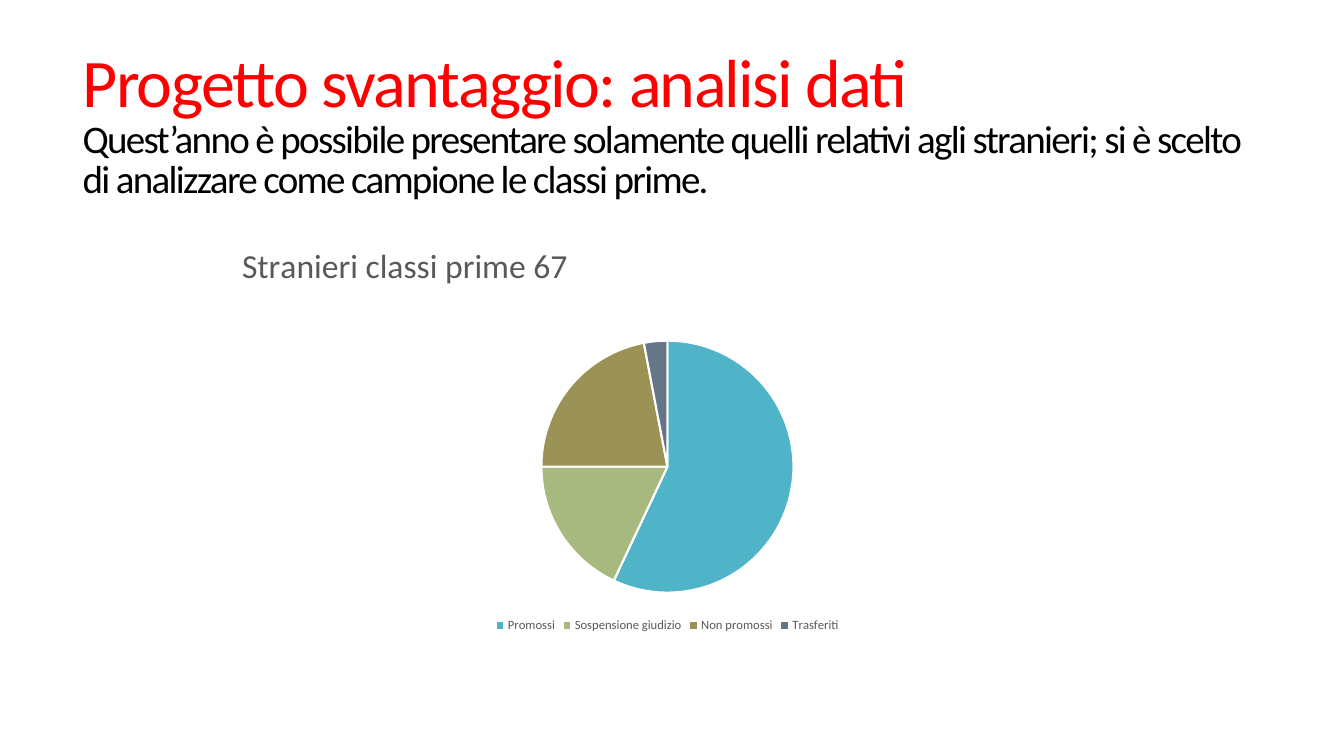
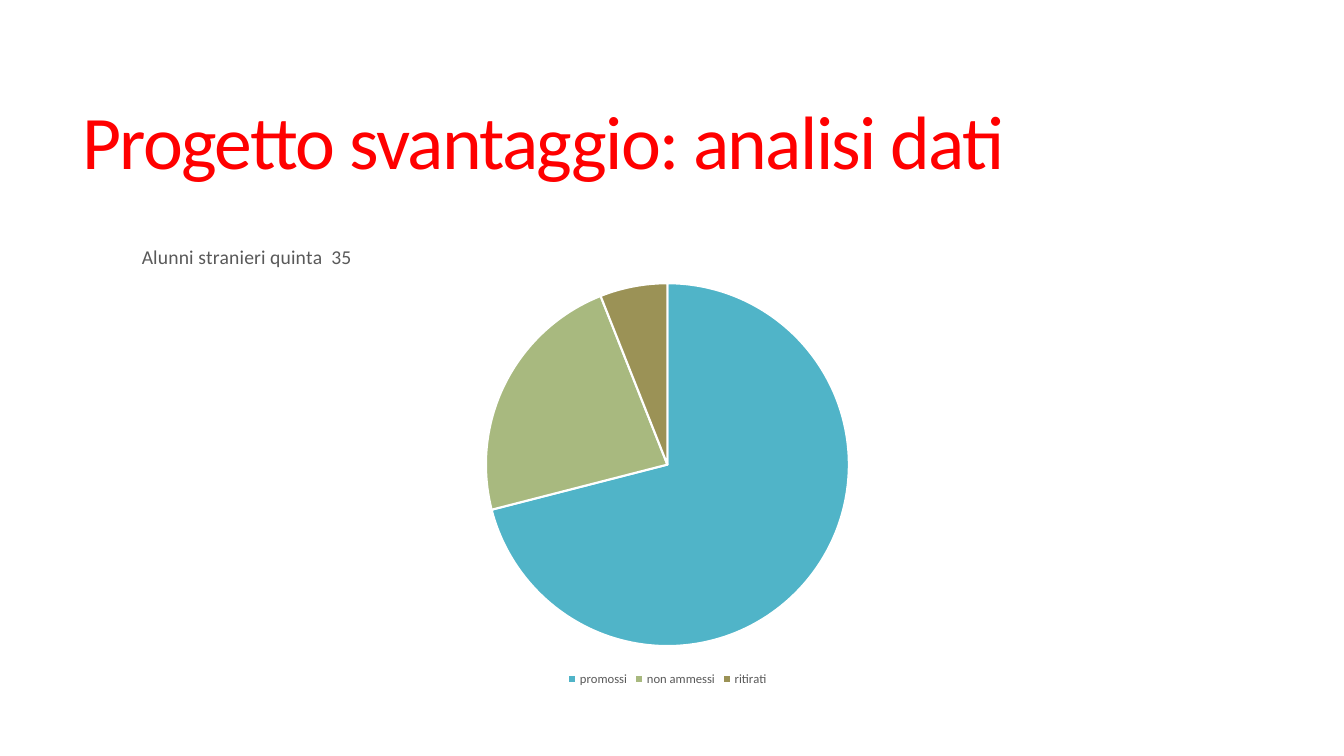
from lxml.etree import SubElement
from pptx import Presentation
from pptx.chart.data import CategoryChartData
from pptx.dml.color import RGBColor
from pptx.enum.chart import XL_CHART_TYPE as ChartType, XL_LEGEND_POSITION as LegendPos
from pptx.enum.text import MSO_ANCHOR as Anchor
from pptx.oxml.ns import qn
from pptx.util import Pt

PX = 9144  # 100 px to the inch
FONT = "Calibri"
RED = RGBColor(0xFF, 0x00, 0x00)
BLACK = RGBColor(0x00, 0x00, 0x00)
WHITE = RGBColor(0xFF, 0xFF, 0xFF)
GREY = RGBColor(0x59, 0x59, 0x59)
SLICES = [RGBColor(0x50, 0xB4, 0xC8), RGBColor(0xA8, 0xB9, 0x7F),
          RGBColor(0x9B, 0x92, 0x56), RGBColor(0x65, 0x76, 0x89)]
HEADING = "Progetto svantaggio: analisi dati"
CHART_LEFT, CHART_WIDTH = 74, 1176


def style_font(font, size, color):
    for name, value in {"name": FONT, "size": Pt(size), "bold": False}.items():
        setattr(font, name, value)
    font.color.rgb = color


def add_heading(slide, top, lines):
    """Each line is (text, size, colour)."""
    box = slide.shapes.add_textbox(72 * PX, top * PX, 1178 * PX, 181 * PX)
    frame = box.text_frame
    frame.word_wrap = True
    frame.vertical_anchor = Anchor.MIDDLE
    for index, (text, size, color) in enumerate(lines):
        paragraph = frame.paragraphs[0] if index == 0 else frame.add_paragraph()
        paragraph.line_spacing = 0.85
        run = paragraph.add_run()
        run.text = text
        style_font(run.font, size, color)
        run.font._element.set("spc", "-120")


def set_layout(element, values):
    """Place a chart part by fractions of the chart area."""
    layout = element.find(qn("c:layout"))
    if layout is None:
        layout = element.makeelement(qn("c:layout"))
        text = element.find(qn("c:tx"))
        element.insert(0 if text is None else 1, layout)
    for child in list(layout):
        layout.remove(child)
    manual = SubElement(layout, qn("c:manualLayout"))
    for tag, value in values.items():
        SubElement(manual, qn("c:" + tag)).set("val", str(value))


def add_pie(slide, top, height, results, title, title_size, title_at, center_y, radius):
    data = CategoryChartData()
    data.categories = list(results)
    data.add_series("Series 1", list(results.values()))
    chart = slide.shapes.add_chart(ChartType.PIE, CHART_LEFT * PX, top * PX,
                                   CHART_WIDTH * PX, height * PX, data).chart
    style_font(chart.font, 10, BLACK)

    # Title at the upper left
    chart.has_title = True
    chart.chart_title.include_in_layout = False
    paragraph = chart.chart_title.text_frame.paragraphs[0]
    run = paragraph.add_run()
    run.text = title
    style_font(run.font, title_size, GREY)
    title_x, title_y = title_at
    set_layout(chart.chart_title._element, {
        "xMode": "edge", "yMode": "edge",
        "x": round((title_x - CHART_LEFT) / CHART_WIDTH, 4),
        "y": round((title_y - top) / height, 4)})

    # Legend below
    chart.has_legend = True
    chart.legend.position = LegendPos.BOTTOM
    chart.legend.include_in_layout = False
    style_font(chart.legend.font, 9, GREY)

    # Slices, in a square centred across the chart
    plot = chart.plots[0]
    plot.vary_by_categories = True
    for index, color in enumerate(SLICES[:len(results)]):
        slice_format = plot.series[0].points[index].format
        slice_format.fill.solid()
        slice_format.fill.fore_color.rgb = color
        slice_format.line.color.rgb = WHITE
        slice_format.line.width = Pt(1.5)
    set_layout(chart._chartSpace.chart.plotArea, {
        "layoutTarget": "inner", "xMode": "edge", "yMode": "edge",
        "x": round(0.5 - radius / CHART_WIDTH, 4),
        "y": round((center_y - radius - top) / height, 4),
        "w": round(2 * radius / CHART_WIDTH, 4),
        "h": round(2 * radius / height, 4)})


def main():
    deck = Presentation()
    deck.slide_width, deck.slide_height = 1333 * PX, 750 * PX
    blank = deck.slide_layouts[6]

    # First-year classes
    first_years = deck.slides.add_slide(blank)
    add_heading(first_years, 35, [
        (HEADING, 48.6, RED),
        ("Quest’anno è possibile presentare solamente quelli relativi agli stranieri; "
         "si è scelto di analizzare come campione le classi prime.", 27.9, BLACK)])
    add_pie(first_years, 220, 412,
            {"Promossi": 57, "Sospensione giudizio": 18, "Non promossi": 22, "Trasferiti": 3},
            "Stranieri classi prime 67", 24, (234, 235), 463, 125)

    # Fifth-year classes
    fifth_years = deck.slides.add_slide(blank)
    add_heading(fifth_years, 55, [(HEADING, 54, RED)])
    add_pie(fifth_years, 217, 468,
            {"promossi": 71, "non ammessi": 23, "ritirati": 6},
            "Alunni stranieri quinta  35", 14, (137, 238), 461, 180)

    deck.save("out.pptx")


if __name__ == "__main__":
    main()
